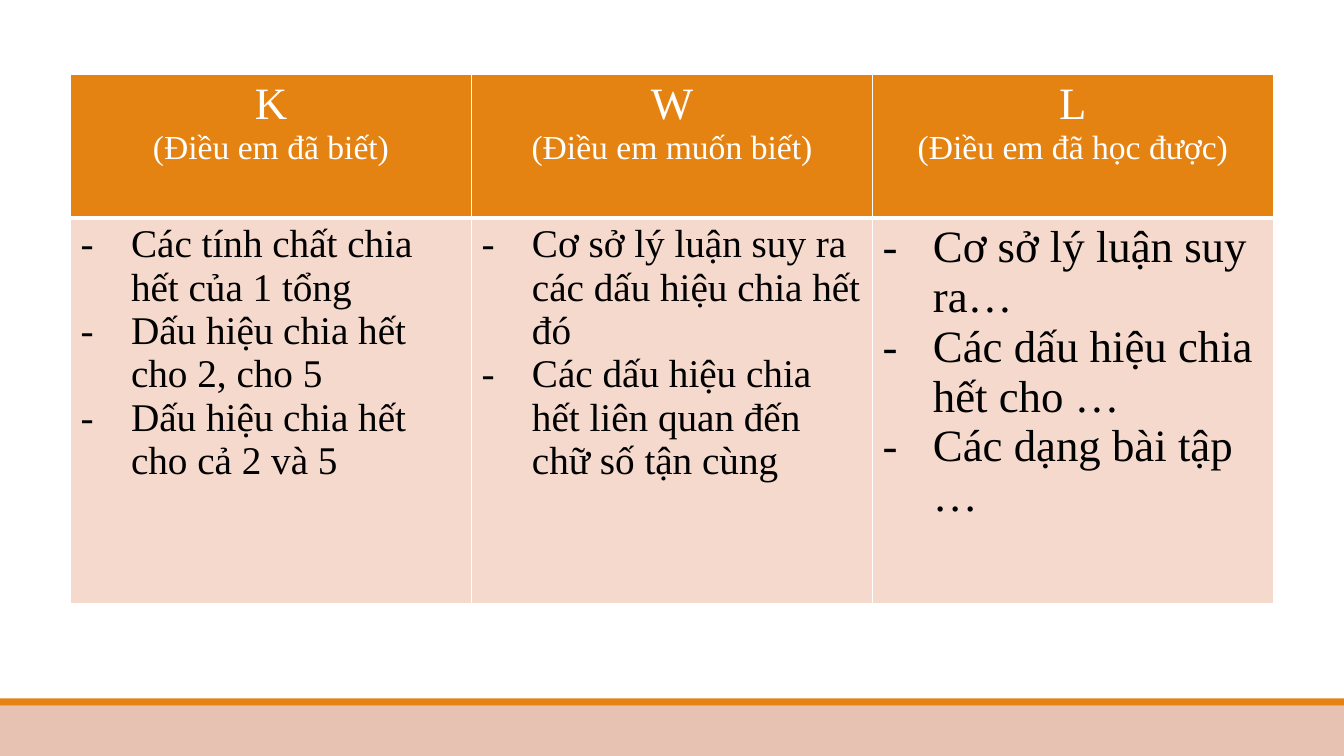
from lxml import etree
from pptx import Presentation
from pptx.dml.color import RGBColor
from pptx.enum.shapes import MSO_SHAPE
from pptx.enum.text import PP_ALIGN
from pptx.oxml.ns import qn
from pptx.util import Inches, Pt

RECTANGLE = MSO_SHAPE.RECTANGLE
CENTER = PP_ALIGN.CENTER
LEFT = PP_ALIGN.LEFT
FONT = "Times New Roman"
ORANGE, RUST, BLUSH = "E48312", "BD582C", "F5D9CC"
WHITE, BLACK = "FFFFFF", "000000"
HEADER_HEIGHT, BODY_HEIGHT = 1.42, 3.83


def paint(fill, color):
    fill.solid()
    fill.fore_color.rgb = RGBColor.from_string(color)


def write(paragraph, text, size, color, align=LEFT, bullet=None):
    paragraph.alignment = align
    if bullet:
        properties = paragraph._p.get_or_add_pPr()
        properties.set("marL", str(Inches(0.5)))
        properties.set("indent", str(-Inches(0.5)))
        etree.SubElement(properties, qn("a:buFont"), typeface=FONT)
        etree.SubElement(properties, qn("a:buChar"), char=bullet)
    span = paragraph.add_run()
    span.text = text
    span.font.name = FONT
    span.font.size = Pt(size)
    span.font.color.rgb = RGBColor.from_string(color)


columns = [
    ("K", "(Điều em đã biết)", 28, [
        "Các tính chất chia hết của 1 tổng",
        "Dấu hiệu chia hết cho 2, cho 5",
        "Dấu hiệu chia hết cho cả 2 và 5",
    ]),
    ("W", "(Điều em muốn biết)", 28, [
        "Cơ sở lý luận suy ra các dấu hiệu chia hết đó",
        "Các dấu hiệu chia hết liên quan đến chữ số tận cùng",
    ]),
    ("L", "(Điều em đã học được)", 32, [
        "Cơ sở lý luận suy ra…",
        "Các dấu hiệu chia hết cho …",
        "Các dạng bài tập …",
    ]),
]

deck = Presentation()
deck.slide_width = Inches(13.33)
deck.slide_height = Inches(7.5)
page = deck.slides.add_slide(deck.slide_layouts[6])

for top, height, color, opacity in [(7, 0.5, RUST, 36), (6.93, 0.07, ORANGE, 100)]:
    band = page.shapes.add_shape(
        RECTANGLE, 0, Inches(top), deck.slide_width, Inches(height))
    band.shadow.inherit = False
    band.line.fill.background()
    paint(band.fill, color)
    if opacity < 100:
        tint = band.fill._xPr.find(qn("a:solidFill"))[0]
        etree.SubElement(tint, qn("a:alpha"), val=str(opacity * 1000))

table = page.shapes.add_table(
    2, len(columns), Inches(0.7), Inches(0.74),
    Inches(11.93), Inches(HEADER_HEIGHT + BODY_HEIGHT)).table
table.rows[0].height = Inches(HEADER_HEIGHT)
table.rows[1].height = Inches(BODY_HEIGHT)

for number, (letter, caption, size, points) in enumerate(columns):
    header = [(letter, 32, WHITE, CENTER, None), (caption, 24, WHITE, CENTER, None)]
    body = [(point, size, BLACK, LEFT, "-") for point in points]
    for row, (lines, color) in enumerate([(header, ORANGE), (body, BLUSH)]):
        cell = table.cell(row, number)
        borders = cell._tc.get_or_add_tcPr()
        for side in "LRTB":
            width = 3 if row == 0 and side == "B" else 1
            border = etree.SubElement(borders, qn(f"a:ln{side}"), w=str(Pt(width)))
            stroke = etree.SubElement(border, qn("a:solidFill"))
            etree.SubElement(stroke, qn("a:srgbClr"), val=WHITE)
        paint(cell.fill, color)
        frame = cell.text_frame
        for index, line in enumerate(lines):
            paragraph = frame.add_paragraph() if index else frame.paragraphs[0]
            write(paragraph, *line)

deck.save("out.pptx")
